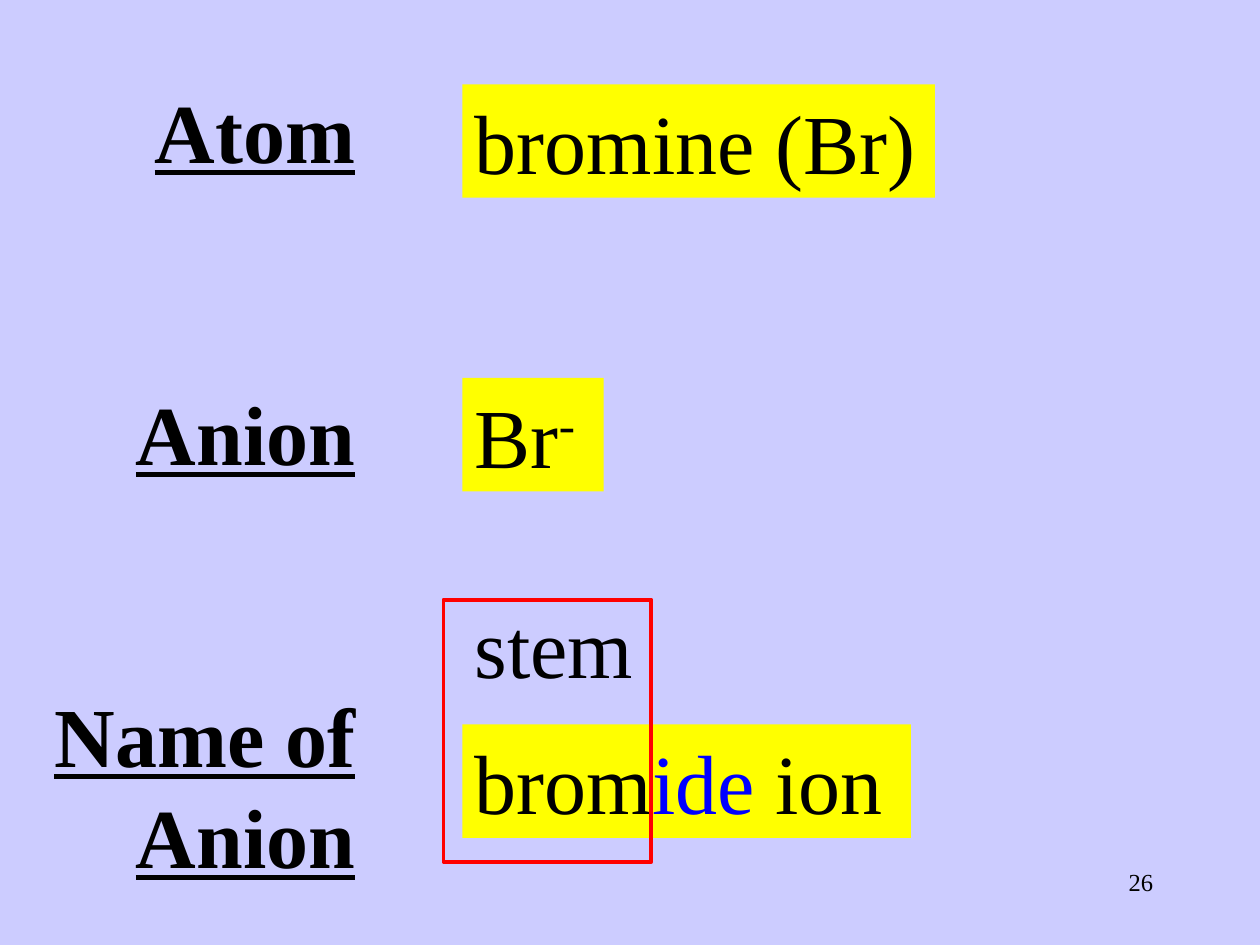
from dataclasses import dataclass

from pptx import Presentation
from pptx.dml.color import RGBColor
from pptx.enum.shapes import MSO_SHAPE
from pptx.enum.text import MSO_ANCHOR, MSO_AUTO_SIZE, PP_ALIGN
from pptx.util import Inches, Pt


@dataclass(frozen=True)
class Theme:
    font: str = "Times New Roman"
    background: RGBColor = RGBColor(0xCC, 0xCC, 0xFF)
    ink: RGBColor = RGBColor(0, 0, 0)
    suffix: RGBColor = RGBColor(0, 0, 0xFF)
    highlight: RGBColor = RGBColor(0xFF, 0xFF, 0)
    frame: RGBColor = RGBColor(0xFF, 0, 0)
    term_size: Pt = Pt(48)
    number_size: Pt = Pt(14)


THEME = Theme()
TERM_LEFT = 3.67
TERM_HEIGHT = 0.9


def add_run(paragraph, text, **overrides):
    run = paragraph.add_run()
    run.text = text
    formats = {"name": THEME.font, "size": THEME.term_size, **overrides}
    color = formats.pop("color", THEME.ink)
    for attribute, value in formats.items():
        setattr(run.font, attribute, value)
    run.font.color.rgb = color
    return run


def format_frame(frame, **overrides):
    formats = {"word_wrap": True, "auto_size": MSO_AUTO_SIZE.NONE,
               "vertical_anchor": MSO_ANCHOR.TOP, **overrides}
    for attribute, value in formats.items():
        setattr(frame, attribute, value)


def add_labels(slide, labels):
    title = slide.shapes.title
    title.left, title.top = Inches(0), Inches(0)
    title.width, title.height = Inches(2.92), Inches(7.5)
    frame = title.text_frame
    format_frame(frame, margin_top=Inches(0.63))
    for index, label in enumerate(labels):
        paragraph = frame.add_paragraph() if index else frame.paragraphs[0]
        paragraph.alignment = PP_ALIGN.RIGHT
        paragraph.space_before = Pt(115 if index else 0)
        add_run(paragraph, label, bold=True, underline=True)


def add_text(shapes, left, top, width, height, align=PP_ALIGN.LEFT):
    box = shapes.add_textbox(Inches(left), Inches(top), Inches(width), Inches(height))
    format_frame(box.text_frame)
    paragraph = box.text_frame.paragraphs[0]
    paragraph.alignment = align
    return box, paragraph


def add_term(slide, top, width):
    box, paragraph = add_text(slide.shapes, TERM_LEFT, top, width, TERM_HEIGHT)
    box.fill.solid()
    box.fill.fore_color.rgb = THEME.highlight
    return paragraph


def add_stem_frame(slide):
    group = slide.shapes.add_group_shape()
    _, stem = add_text(group.shapes, TERM_LEFT, 4.67, 1.5, TERM_HEIGHT)
    add_run(stem, "stem")
    frame = group.shapes.add_shape(MSO_SHAPE.RECTANGLE, Inches(3.52), Inches(4.76),
                                   Inches(1.65), Inches(2.08))
    frame.shadow.inherit = False
    frame.fill.background()
    frame.line.color.rgb = THEME.frame
    frame.line.width = Pt(2.25)


def main():
    presentation = Presentation()
    presentation.slide_width, presentation.slide_height = Inches(10), Inches(7.5)
    slide = presentation.slides.add_slide(presentation.slide_layouts[5])
    slide.background.fill.solid()
    slide.background.fill.fore_color.rgb = THEME.background

    # Row labels
    add_labels(slide, ["Atom", "Anion", "Name of Anion"])

    # Atom, anion and anion name
    add_run(add_term(slide, 0.67, 3.75), "bromine (Br)")

    anion = add_term(slide, 3, 1.12)
    add_run(anion, "Br")
    charge = add_run(anion, "-")
    charge.font._element.set("baseline", "30000")

    anion_name = add_term(slide, 5.75, 3.56)
    add_run(anion_name, "brom")
    add_run(anion_name, "ide", color=THEME.suffix)
    add_run(anion_name, " ion")

    # Frame around the stem
    add_stem_frame(slide)

    # Slide number
    _, number = add_text(slide.shapes, 7.17, 6.83, 2.08, 0.5, PP_ALIGN.RIGHT)
    add_run(number, "26", size=THEME.number_size)

    presentation.save("out.pptx")


if __name__ == "__main__":
    main()
